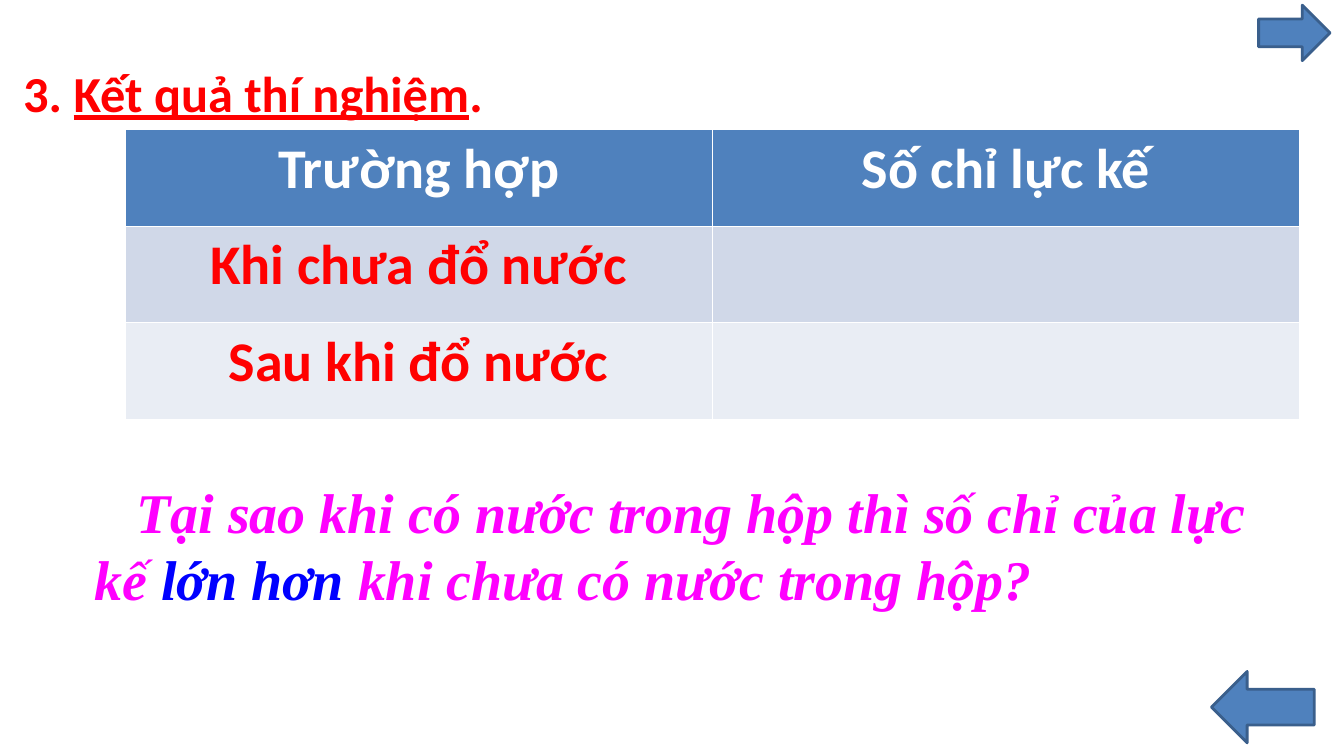
"""Build the slide on the results of the force meter experiment."""
from pptx import Presentation, util as u
from pptx.dml.color import RGBColor
from pptx.enum import shapes, text

RED = RGBColor(0xFF, 0x00, 0x00)
WHITE = RGBColor(0xFF, 0xFF, 0xFF)
PINK = RGBColor(0xFF, 0x00, 0xFF)
BLUE = RGBColor(0x00, 0x00, 0xFF)
STEEL = RGBColor(0x4F, 0x81, 0xBD)
EDGE = RGBColor(0x3A, 0x5F, 0x8C)
DARK = RGBColor(0xD0, 0xD8, 0xE8)
PALE = RGBColor(0xE9, 0xED, 0xF4)


class Board:
    def __init__(self, deck):
        self.slide = deck.slides.add_slide(deck.slide_layouts[5])
        self.items = self.slide.shapes

    def style(self, para, size, color, face="Calibri", italic=None):
        font = para.font
        font.name, font.size, font.bold = face, u.Pt(size), True
        font.italic, font.color.rgb = italic, color

    def title(self, box, parts):
        head = self.items.title
        head.left, head.top, head.width, head.height = map(u.Cm, box)
        head.text_frame.vertical_anchor = text.MSO_ANCHOR.MIDDLE
        para = head.text_frame.paragraphs[0]
        para.alignment = text.PP_ALIGN.LEFT
        self.style(para, 36, RED)
        for words, under in parts:
            run = para.add_run()
            run.text, run.font.underline = words, under

    def table(self, box, rows):
        grid = self.items.add_table(len(rows), len(rows[0][0]), *map(u.Cm, box)).table
        for row, (words, fill, color) in enumerate(rows):
            for col, word in enumerate(words):
                cell = grid.cell(row, col)
                cell.fill.solid()
                cell.fill.fore_color.rgb = fill
                para = cell.text_frame.paragraphs[0]
                para.alignment = text.PP_ALIGN.CENTER
                self.style(para, 40, color)
                if word:
                    para.add_run().text = word

    def arrow(self, kind, box):
        shape = self.items.add_shape(kind, *map(u.Cm, box))
        shape.shadow.inherit = False
        shape.fill.solid()
        shape.fill.fore_color.rgb = STEEL
        shape.line.color.rgb = EDGE
        shape.line.width = u.Pt(2)

    def note(self, box, parts, indent):
        frame = self.items.add_textbox(*map(u.Cm, box)).text_frame
        frame.word_wrap = True
        frame.auto_size = text.MSO_AUTO_SIZE.SHAPE_TO_FIT_TEXT
        para = frame.paragraphs[0]
        para._p.get_or_add_pPr().set("indent", str(u.Cm(indent)))
        self.style(para, 40, PINK, "Times New Roman", True)
        for words, color in parts:
            run = para.add_run()
            run.text, run.font.color.rgb = words, color


def main():
    deck = Presentation()
    deck.slide_width, deck.slide_height = u.Cm(33.87), u.Cm(19.05)
    board = Board(deck)
    board.title((0.33, 0.74, 30.48, 3.18),
                [("3. ", False), ("Kết quả thí nghiệm", True), (".", False)])
    board.table((3.15, 3.27, 29.6, 7.3), [
        (("Trường hợp", "Số chỉ lực kế"), STEEL, WHITE),
        (("Khi chưa đổ nước", ""), DARK, RED),
        (("Sau khi đổ nước", ""), PALE, RED),
    ])
    board.arrow(shapes.MSO_SHAPE.LEFT_ARROW, (30.53, 16.92, 2.59, 1.8))
    board.note((2.13, 11.91, 31.01, 3.68), [
        ("Tại sao khi có nước trong hộp thì số chỉ của lực kế ", PINK),
        ("lớn hơn ", BLUE),
        ("khi chưa có nước trong hộp?", PINK),
    ], 1.06)
    board.arrow(shapes.MSO_SHAPE.RIGHT_ARROW, (31.72, 0.13, 1.8, 1.4))
    deck.save("out.pptx")


if __name__ == "__main__":
    main()
